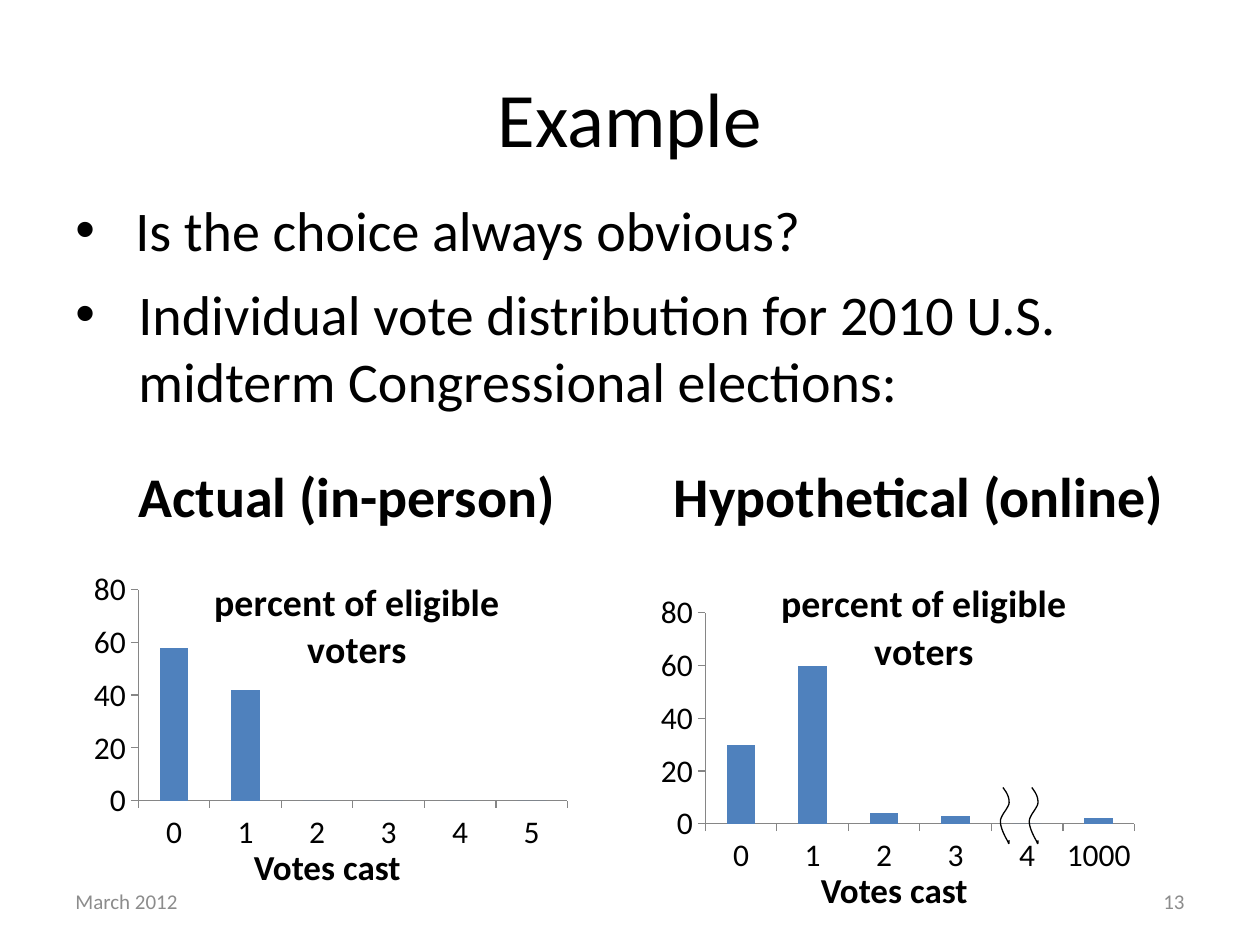
import pptx
import pptx.chart.data
import pptx.dml.color
import pptx.enum.chart
import pptx.enum.text
import pptx.oxml
import pptx.util
import lxml.etree

Pt = pptx.util.Pt
Align = pptx.enum.text.PP_ALIGN
Anchor = pptx.enum.text.MSO_ANCHOR
Tick = pptx.enum.chart.XL_TICK_MARK
hues = {"ink": "000000", "gray": "8C8C8C", "axis": "868686", "bar": "4F81BD"}
tone = {k: pptx.dml.color.RGBColor.from_string(v) for k, v in hues.items()}

deck = pptx.Presentation()
deck.slide_width, deck.slide_height = Pt(720), Pt(540)
slide = deck.slides.add_slide(deck.slide_layouts[6])


def write(text, frame=None, at=None, size=32, bold=False, hue="ink",
          align=Align.LEFT, anchor=Anchor.TOP, hang=0):
    if frame is None:
        frame = slide.shapes.add_textbox(*map(Pt, at)).text_frame
        frame.word_wrap = True
        frame.vertical_anchor = anchor
    para = frame.paragraphs[0]
    para.alignment = align
    run = para.add_run()
    run.text = text
    font = run.font
    font.name, font.size, font.bold = "Calibri", Pt(size), bold
    font.color.rgb = tone[hue]
    if hang:
        props = para._p.get_or_add_pPr()
        props.set("marL", str(Pt(hang)))
        props.set("indent", str(-Pt(hang)))
        ns = pptx.oxml.ns.qn
        lxml.etree.SubElement(props, ns("a:buFont")).set("typeface", "Arial")
        lxml.etree.SubElement(props, ns("a:buChar")).set("char", "•")


def place(part, **spots):
    inner = '<c:layoutTarget val="inner"/>' if "w" in spots else ""
    modes = "".join(f'<c:{k}Mode val="edge"/>' for k in "xy")
    sizes = "".join(f'<c:{k} val="{v}"/>' for k, v in spots.items())
    space = pptx.oxml.ns.nsdecls("c")
    node = pptx.oxml.parse_xml(
        f"<c:layout {space}><c:manualLayout>{inner}{modes}{sizes}"
        "</c:manualLayout></c:layout>")
    old = part.find(pptx.oxml.ns.qn("c:layout"))
    if old is not None:
        part.remove(old)
    text = part.find(pptx.oxml.ns.qn("c:tx"))
    part.insert(0 if text is None else 1, node)


write("Example", at=(36, 21.6, 648, 90), size=44, align=Align.CENTER,
      anchor=Anchor.MIDDLE)
write(" Is the choice always obvious?", at=(36, 108, 648, 60), hang=27)
write("March 2012", at=(36, 500.4, 168, 28.8), size=12, hue="gray",
      anchor=Anchor.MIDDLE)
write("13", at=(516, 500.4, 168, 28.8), size=12, hue="gray",
      align=Align.RIGHT, anchor=Anchor.MIDDLE)

label = "percent of eligible voters"
panels = [
    ("Actual (in-person)", 72, 270, 48, 246, 0.32,
     {"0": 58, "1": 42, "2": 0, "3": 0, "4": 0, "5": 0}),
    ("Hypothetical (online)", 378, 300, 372, 259.2, 0.27,
     {"0": 30, "1": 60, "2": 4, "3": 3, "4": 0, "1000": 2}),
]
for head, left, wide, x, y, drop, votes in panels:
    data = pptx.chart.data.CategoryChartData()
    data.categories = list(votes)
    data.add_series(label, list(votes.values()))
    chart = slide.shapes.add_chart(
        pptx.enum.chart.XL_CHART_TYPE.COLUMN_CLUSTERED,
        Pt(x), Pt(y), Pt(282), Pt(246), data).chart
    chart.has_legend = False
    chart.font.name, chart.font.size = "Calibri", Pt(18)
    chart.font.color.rgb = tone["ink"]
    chart.has_title = True
    write(label, frame=chart.chart_title.text_frame, size=21.6, bold=True,
          align=Align.CENTER)
    place(chart.chart_title._element, x=0.25, y=drop)
    place(chart._chartSpace.chart.plotArea, x=0.11, y=0.37, w=0.87, h=0.49)

    plot = chart.plots[0]
    plot.gap_width, plot.vary_by_categories = 150, False
    fill = plot.series[0].format.fill
    fill.solid()
    fill.fore_color.rgb = tone["bar"]
    for axis in (chart.category_axis, chart.value_axis):
        axis.has_major_gridlines = False
        axis.major_tick_mark = Tick.OUTSIDE
        axis.minor_tick_mark = Tick.NONE
        axis.format.line.color.rgb = tone["axis"]
        axis.format.line.width = Pt(0.75)
    scale = chart.value_axis
    scale.minimum_scale, scale.maximum_scale, scale.major_unit = 0, 80, 20

    write("Votes cast", at=(x + 90, y + 233.5, 174, 31.5), size=20, bold=True)
    write(head, at=(left, 260, wide, 46), bold=True)

curves = [
    [(1.44, 0), (3.6, 2.9), (5, 5), (5, 8.6)],
    [(5, 8.6), (5, 11.5), (0, 15.8), (0, 19.4)],
    [(0, 19.4), (0, 23.8), (3.6, 29.5), (4.3, 31)],
    [(4.3, 31), (5, 33.1), (5, 31.7), (5, 30.2)],
]
steps = 10
for left in (571.7, 588.2):
    dots = []
    for knots in curves:
        for step in range(steps + 1):
            t = step / steps
            mix = ((1 - t) ** 3, 3 * t * (1 - t) ** 2, 3 * t * t * (1 - t), t ** 3)
            x, y = (sum(m * k[i] for m, k in zip(mix, knots)) for i in (0, 1))
            dots.append((Pt(left + x), Pt(450 + y)))
    pen = slide.shapes.build_freeform(*dots[0])
    pen.add_line_segments(dots[1:], close=False)
    wave = pen.convert_to_shape()
    wave.shadow.inherit = False
    wave.fill.background()
    wave.line.color.rgb = tone["ink"]
    wave.line.width = Pt(0.75)

write("Individual vote distribution for 2010 U.S. midterm Congressional elections:",
      at=(36, 156, 648, 106.5), hang=36)

deck.save("out.pptx")
